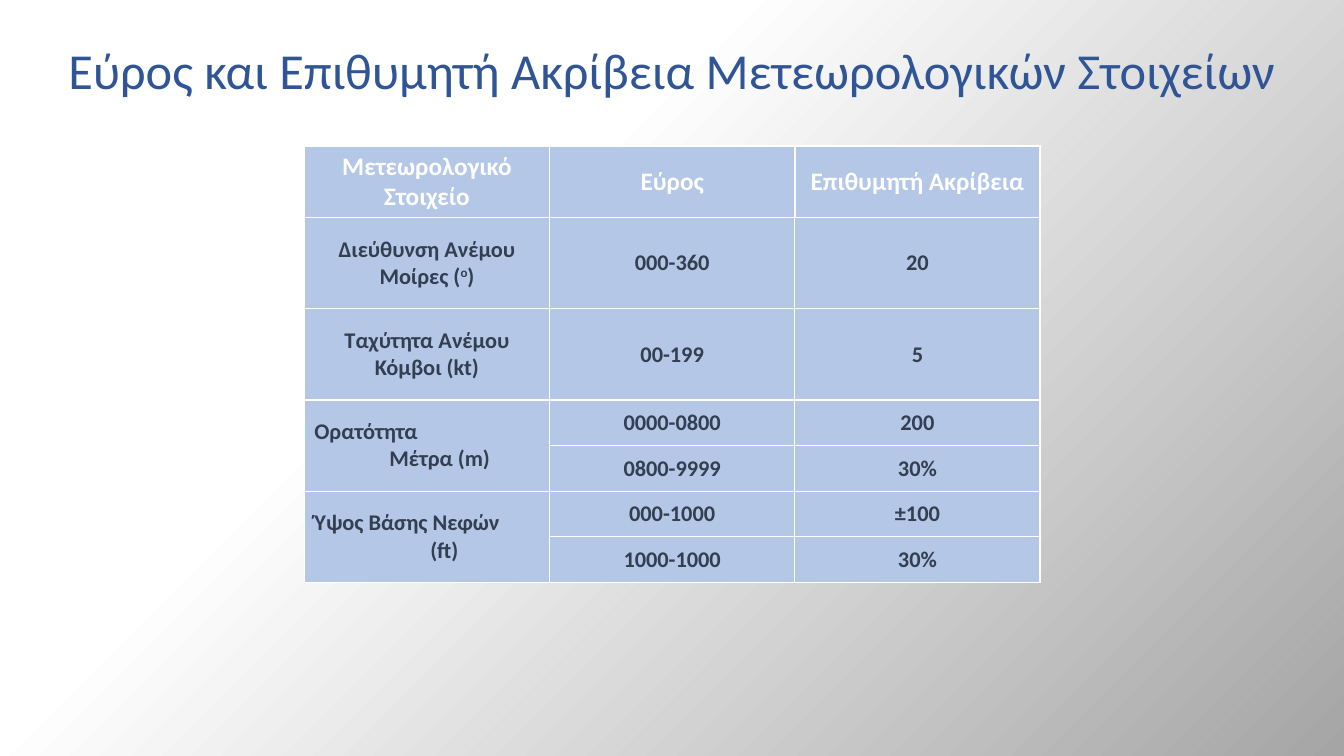
from dataclasses import dataclass

from pptx import Presentation
from pptx import util as u
from pptx.dml.color import RGBColor
from pptx.enum import text
from pptx.oxml import ns, parse_xml

BLUE = RGBColor(0x2F, 0x55, 0x97)
PALE = RGBColor(0xB4, 0xC7, 0xE7)
SLATE = RGBColor(0x33, 0x3F, 0x50)
WHITE = RGBColor(0xFF, 0xFF, 0xFF)
GREY = RGBColor(0xA5, 0xA5, 0xA5)

TITLE_FONT = {"name": "Calibri", "size": u.Pt(36)}
HEADER_FONT = {"name": "Calibri", "size": u.Pt(18), "bold": True}
BODY_FONT = {"name": "Calibri", "size": u.Pt(16), "bold": True}

COLUMN_WIDTH = u.Cm(6.18)
HEADER_HEIGHT = u.Cm(1.8)
RANGE_HEIGHT = u.Cm(1.15)
HEADERS = ("Μετεωρολογικό Στοιχείο", "Εύρος", "Επιθυμητή Ακρίβεια")


@dataclass
class Element:
    """A weather element with its (range, accuracy) pairs."""
    name: str
    ranges: list[tuple[str, str]]
    superscript: str = ""
    tail: str = ""
    unit: str = ""
    unit_indent: float = 0


ELEMENTS = [
    Element("Διεύθυνση Ανέμου Μοίρες (", [("000-360", "20")], superscript="ο", tail=")"),
    Element("Ταχύτητα Ανέμου Κόμβοι (kt)", [("00-199", "5")]),
    Element("Ορατότητα", [("0000-0800", "200"), ("0800-9999", "30%")],
            unit="Μέτρα (m)", unit_indent=1.89),
    Element("Ύψος Βάσης Νεφών", [("000-1000", "±100"), ("1000-1000", "30%")],
            unit="(ft)", unit_indent=2.92),
]


def add_run(p, words: str, font: dict, color: RGBColor):
    r = p.add_run()
    r.text = words
    for key, value in font.items():
        setattr(r.font, key, value)
    r.font.color.rgb = color
    return r


def write_cell(cell, words: str, font: dict, color: RGBColor):
    p = cell.text_frame.paragraphs[0]
    p.alignment = text.PP_ALIGN.CENTER
    add_run(p, words, font, color)
    return p


def write_name(cell, element: Element) -> None:
    p = write_cell(cell, element.name, BODY_FONT, SLATE)
    if element.superscript:
        r = add_run(p, element.superscript, BODY_FONT, SLATE)
        r._r.get_or_add_rPr().set("baseline", "30000")
        add_run(p, element.tail, BODY_FONT, SLATE)
    if element.unit:
        p.alignment = text.PP_ALIGN.LEFT
        p = cell.text_frame.add_paragraph()
        p._p.get_or_add_pPr().set("marL", str(u.Cm(element.unit_indent)))
        add_run(p, element.unit, BODY_FONT, SLATE)


def style_cell(cell, widths: dict[str, float]) -> None:
    """Fill the cell and draw its borders, given in points by side."""
    cell.vertical_anchor = text.MSO_ANCHOR.MIDDLE
    cell.fill.solid()
    cell.fill.fore_color.rgb = PALE
    tcPr = cell._tc.get_or_add_tcPr()
    for i, (side, width) in enumerate(widths.items()):
        tcPr.insert(i, parse_xml(
            f'<a:ln{side} {ns.nsdecls("a")} w="{u.Pt(width)}"><a:solidFill>'
            f'<a:srgbClr val="{WHITE}"/></a:solidFill></a:ln{side}>'))


def set_background(slide) -> None:
    stops = "".join(f'<a:gs pos="{pos * 1000}"><a:srgbClr val="{color}"/></a:gs>'
                    for pos, color in ((0, WHITE), (35, WHITE), (100, GREY)))
    slide.element.cSld.insert(0, parse_xml(
        f'<p:bg {ns.nsdecls("p", "a")}><p:bgPr><a:gradFill rotWithShape="1">'
        f'<a:gsLst>{stops}</a:gsLst><a:path path="circle">'
        '<a:fillToRect r="100000" b="100000"/></a:path></a:gradFill>'
        '<a:effectLst/></p:bgPr></p:bg>'))


def add_title(slide, width: int) -> None:
    tf = slide.shapes.add_textbox(0, 0, width, u.Cm(3.68)).text_frame
    tf.word_wrap = True
    tf.vertical_anchor = text.MSO_ANCHOR.MIDDLE
    p = tf.paragraphs[0]
    p.alignment = text.PP_ALIGN.CENTER
    p.line_spacing = 0.9
    add_run(p, "Εύρος και Επιθυμητή Ακρίβεια Μετεωρολογικών Στοιχείων", TITLE_FONT, BLUE)


def add_accuracy_table(slide) -> None:
    n_rows = 1 + sum(len(e.ranges) for e in ELEMENTS)
    n_cols = len(HEADERS)
    table = slide.shapes.add_table(n_rows, n_cols, u.Cm(7.67), u.Cm(3.68),
                                   COLUMN_WIDTH * n_cols, u.Cm(11)).table
    for column in table.columns:
        column.width = COLUMN_WIDTH
    table.rows[0].height = HEADER_HEIGHT
    for col, header in enumerate(HEADERS):
        write_cell(table.cell(0, col), header, HEADER_FONT, WHITE)

    row = 1
    for element in ELEMENTS:
        last = row + len(element.ranges) - 1
        write_name(table.cell(row, 0), element)
        if last > row:
            table.cell(row, 0).merge(table.cell(last, 0))
        for values in element.ranges:
            table.rows[row].height = RANGE_HEIGHT * (2 if len(element.ranges) == 1 else 1)
            for col, value in enumerate(values, 1):
                write_cell(table.cell(row, col), value, BODY_FONT, SLATE)
            row += 1

    for row in range(n_rows):
        for col in range(n_cols):
            heavy = {"L": row == 0, "R": row == 0 or col == n_cols - 1,
                     "T": row <= 1, "B": row == 0}
            style_cell(table.cell(row, col),
                       {side: 1.5 if is_heavy else 1 for side, is_heavy in heavy.items()})


def main() -> None:
    prs = Presentation()
    prs.slide_width, prs.slide_height = u.Cm(33.87), u.Cm(19.05)
    s = prs.slides.add_slide(prs.slide_layouts[6])
    set_background(s)
    add_title(s, prs.slide_width)
    add_accuracy_table(s)
    prs.save("out.pptx")


if __name__ == "__main__":
    main()
